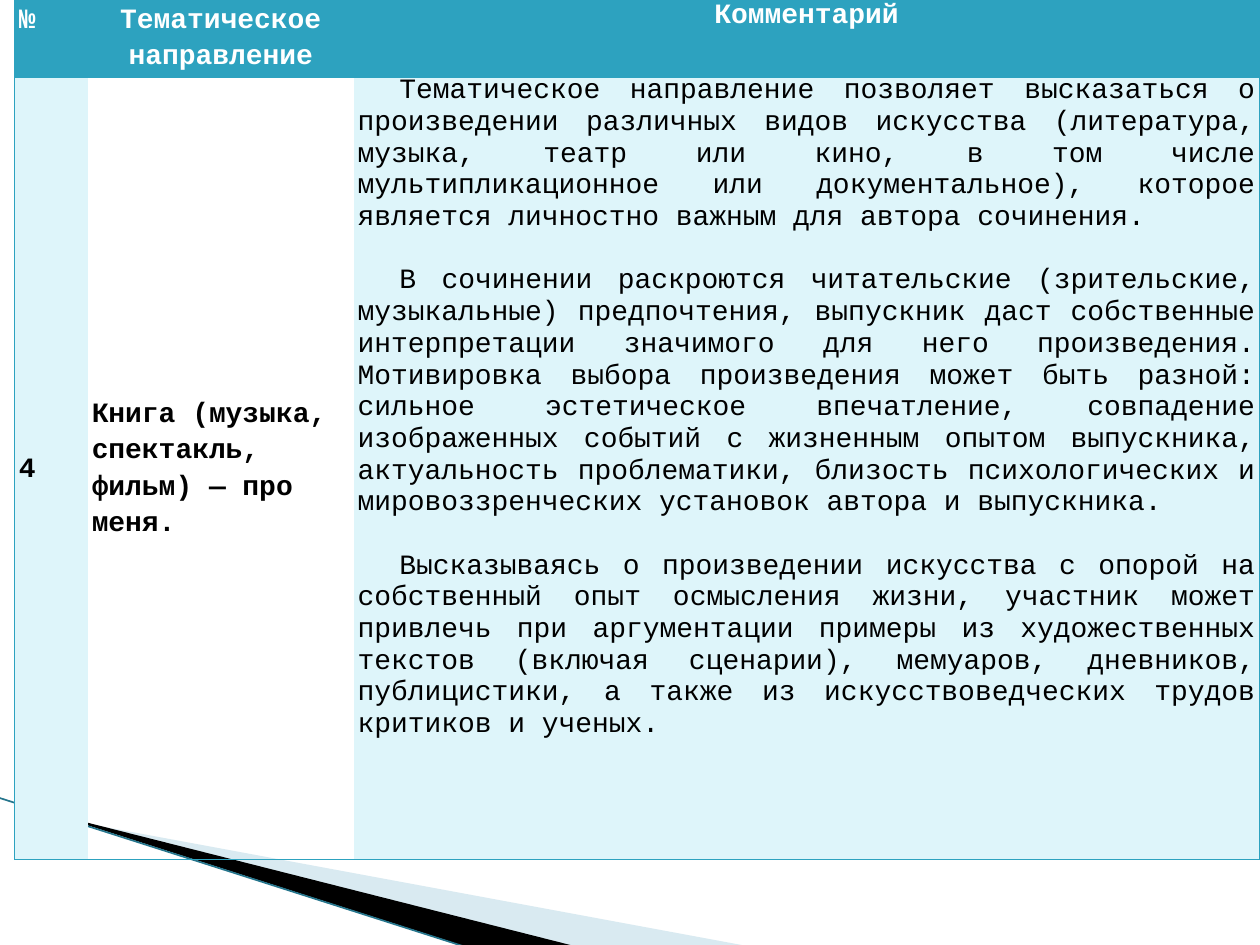
from lxml.etree import SubElement
from pptx import Presentation
from pptx.dml.color import RGBColor
from pptx.enum.shapes import MSO_CONNECTOR as Connector
from pptx.enum.text import MSO_ANCHOR as Anchor, PP_ALIGN as Align
from pptx.oxml.ns import qn
from pptx.util import Cm, Pt

TEAL = "2DA2BF"
PALE = "DEF5FA"
WHITE = "FFFFFF"
BLACK = "000000"


def color(hex_value):
    return RGBColor.from_string(hex_value)


def add_border(cell, side, width):
    line = SubElement(cell._tc.get_or_add_tcPr(), qn(f"a:ln{side}"), w=str(Pt(width)))
    if width:
        fill = SubElement(line, qn("a:solidFill"))
        SubElement(fill, qn("a:srgbClr"), val=TEAL)
    else:
        SubElement(line, qn("a:noFill"))


prs = Presentation()
prs.slide_width, prs.slide_height = Cm(25.4), Cm(19.05)
slide = prs.slides.add_slide(prs.slide_layouts[6])

wedges = [
    ("A0CBDC", 40, [(1.4, 16.54), (15.11, 19.08), (11.58, 19.08), (1.4, 16.51)]),
    (BLACK, 100, [(1.35, 16.48), (11.61, 19.08), (9.45, 19.1), (1.37, 16.51)]),
]
for fill_color, opacity, points in wedges:
    corners = [(Cm(x), Cm(y)) for x, y in points]
    builder = slide.shapes.build_freeform(*corners[0])
    builder.add_line_segments(corners[1:], close=True)
    wedge = builder.convert_to_shape()
    wedge.shadow.inherit = False
    wedge.fill.solid()
    wedge.fill.fore_color.rgb = color(fill_color)
    wedge.line.fill.background()
    if opacity < 100:
        tint = wedge._element.spPr.find(qn("a:solidFill")).find(qn("a:srgbClr"))
        SubElement(tint, qn("a:alpha"), val=str(opacity * 1000))

edge = slide.shapes.add_connector(
    Connector.STRAIGHT, Cm(-0.03), Cm(16.08), Cm(9.42), Cm(19.1)
)
edge.line.color.rgb = color("25758C")
edge.line.width = Pt(0.95)
SubElement(edge._element.spPr, qn("a:effectLst"))

column_widths = [1.47, 5.36, 18.26]
row_heights = [1.52, 15.8]
themes = slide.shapes.add_table(
    2, 3, Cm(0.3), Cm(0), Cm(sum(column_widths)), Cm(sum(row_heights))
).table
themes.first_row = themes.horz_banding = False
for column, width in zip(themes.columns, column_widths):
    column.width = Cm(width)
for row, height in zip(themes.rows, row_heights):
    row.height = Cm(height)

commentary = [
    "Тематическое направление позволяет высказаться о произведении различных видов искусства (литература, музыка, театр или кино, в том числе мультипликационное или документальное), которое является личностно важным для автора сочинения.",
    "В сочинении раскроются читательские (зрительские, музыкальные) предпочтения, выпускник даст собственные интерпретации значимого для него произведения. Мотивировка выбора произведения может быть разной: сильное эстетическое впечатление, совпадение изображенных событий с жизненным опытом выпускника, актуальность проблематики, близость психологических и мировоззренческих установок автора и выпускника.",
    "Высказываясь о произведении искусства с опорой на собственный опыт осмысления жизни, участник может привлечь при аргументации примеры из художественных текстов (включая сценарии), мемуаров, дневников, публицистики, а также из искусствоведческих трудов критиков и ученых.",
]
header = {"fill": TEAL, "ink": WHITE, "bold": True, "anchor": Anchor.TOP}
label = {"ink": BLACK, "bold": True, "anchor": Anchor.MIDDLE}
body = {"fill": PALE, "ink": BLACK, "bold": False, "anchor": Anchor.TOP}
contents = [
    [
        (["№"], header, {"alignment": Align.JUSTIFY, "line_spacing": 1.15}),
        (["Тематическое\nнаправление"], header, {"alignment": Align.CENTER, "line_spacing": 1.15}),
        (["Комментарий"], header, {"alignment": Align.CENTER}),
    ],
    [
        (["4"], {**label, "fill": PALE}, {"alignment": Align.JUSTIFY, "line_spacing": 1.15}),
        (["Книга (музыка, спектакль, фильм) — про меня."], label, {"alignment": Align.LEFT, "line_spacing": 1.15}),
        (commentary, {**body, "indent": 0.84}, {"alignment": Align.JUSTIFY}),
    ],
]
margins = {
    "margin_left": Cm(0.08), "margin_right": Cm(0.08),
    "margin_top": 0, "margin_bottom": 0,
}

for row_index, row_contents in enumerate(contents):
    for column_index, (texts, look, paragraph_format) in enumerate(row_contents):
        cell = themes.cell(row_index, column_index)
        borders = {
            "L": 0.75 if column_index == 0 else 0,
            "R": 0.75 if column_index == 2 else 0,
            "T": 0.75 if row_index == 0 else 4,
            "B": 4 if row_index == 0 else 0.75,
        }
        for side, width in borders.items():
            add_border(cell, side, width)
        if "fill" in look:
            cell.fill.solid()
            cell.fill.fore_color.rgb = color(look["fill"])
        else:
            cell.fill.background()
        for name, value in {**margins, "vertical_anchor": look["anchor"]}.items():
            setattr(cell, name, value)

        frame = cell.text_frame
        for position, text in enumerate(texts):
            paragraph = frame.add_paragraph() if position else frame.paragraphs[0]
            paragraph.text = text
            if "indent" in look:
                properties = paragraph._p.get_or_add_pPr()
                properties.set("marL", "0")
                properties.set("indent", str(Cm(look["indent"])))
            if position:
                paragraph.space_before = Pt(18.1)
            for name, value in paragraph_format.items():
                setattr(paragraph, name, value)
            for run in paragraph.runs:
                font_format = {"name": "Courier New", "size": Pt(16), "bold": look["bold"]}
                for name, value in font_format.items():
                    setattr(run.font, name, value)
                run.font.color.rgb = color(look["ink"])

prs.save("out.pptx")
